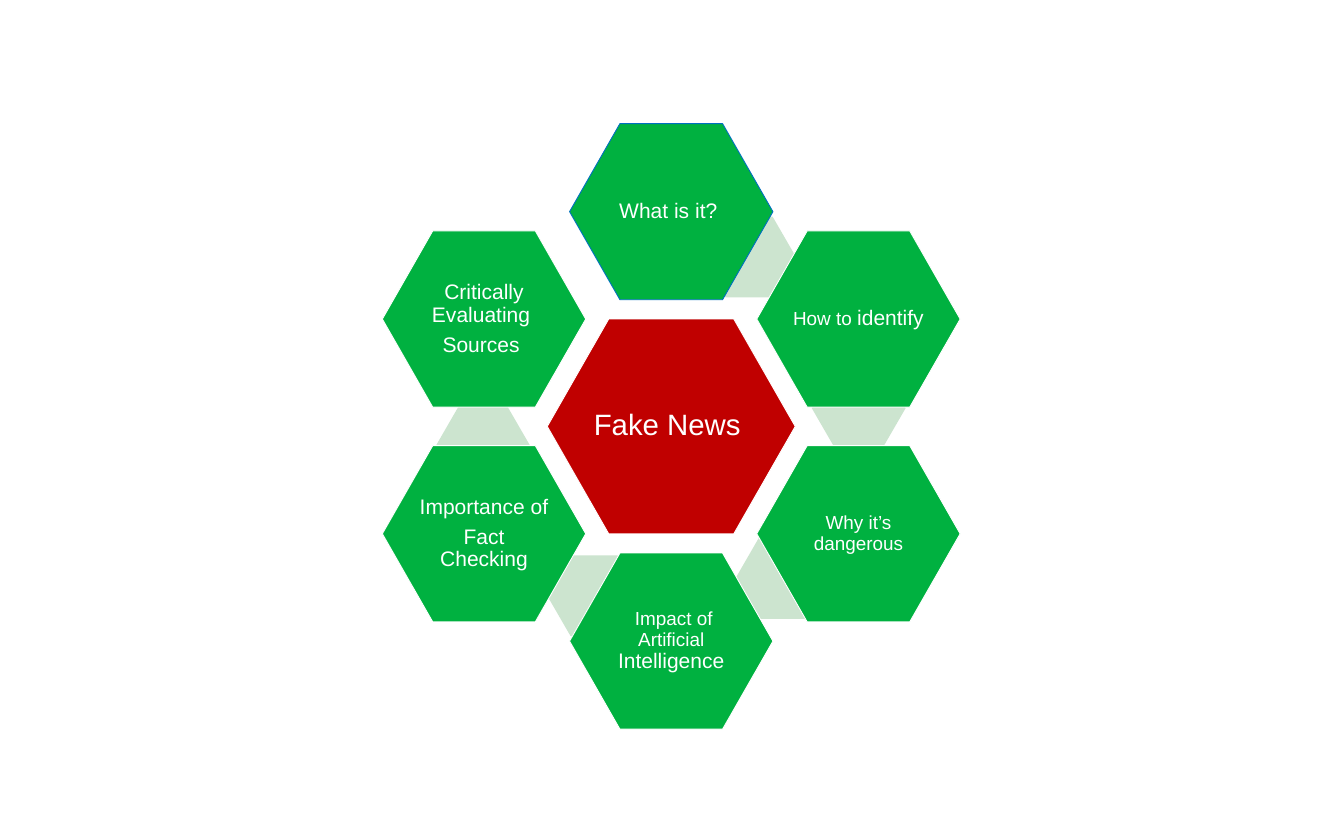
import math

import pptx
import pptx.dml.color
import pptx.enum.shapes
import pptx.enum.text
import pptx.util

Inches = pptx.util.Inches
Pt = pptx.util.Pt
RGBColor = pptx.dml.color.RGBColor

RED = RGBColor(0xC0, 0x00, 0x00)
GREEN = RGBColor(0x00, 0xB1, 0x40)
PALE_GREEN = RGBColor(0xCC, 0xE4, 0xCF)
BLUE = RGBColor(0x00, 0x70, 0xC0)
WHITE = RGBColor(0xFF, 0xFF, 0xFF)

# Ring geometry in inches
CENTER_X, CENTER_Y = 8.88, 5.64
RADIUS_X, RADIUS_Y = 2.86, 2.84
HUB_SIZE = (3.28, 2.84)
TOPIC_SIZE = (2.69, 2.33)
LINK_SIZE = (1.24, 1.07)

# Clockwise from the top: outline, paragraphs of (text, size) runs,
# and the centre of the pale link drawn behind the topic
TOPICS = [
    (BLUE, [[("What is it? ", 20)]], (9.91, 3.4)),
    (WHITE, [[("How to ", 18), ("identify", 20)]], (11.36, 5.4)),
    (WHITE, [[("Why it’s dangerous", 18)]], (10.35, 7.65)),
    (WHITE, [[(" Impact of Artificial ", 18), ("Intelligence", 20)]], (7.86, 7.88)),
    (WHITE, [[("Importance of ", 20)], [("Fact Checking", 20)]], (6.39, 5.89)),
    (WHITE, [[("Critically Evaluating ", 20)], [("Sources ", 20)]], None),
]


class HexagonSlide:
    font = "Arial"
    text_color = WHITE
    line_width = Pt(0.85)

    def __init__(self, slide):
        self.slide = slide

    def hexagon(self, center, size, fill, outline=None, adjustment=0.286):
        (x, y), (width, height) = center, size
        shape = self.slide.shapes.add_shape(
            pptx.enum.shapes.MSO_SHAPE.HEXAGON,
            Inches(x - width / 2), Inches(y - height / 2),
            Inches(width), Inches(height))
        shape.adjustments[0] = adjustment
        shape.shadow.inherit = False
        shape.fill.solid()
        shape.fill.fore_color.rgb = fill
        if outline is None:
            shape.line.fill.background()
        else:
            shape.line.color.rgb = outline
            shape.line.width = self.line_width
        return shape

    def label(self, shape, paragraphs, inset=0.03):
        frame = shape.text_frame
        frame.word_wrap = True
        frame.vertical_anchor = pptx.enum.text.MSO_ANCHOR.MIDDLE
        frame.margin_left = frame.margin_right = Inches(inset)
        frame.margin_top = frame.margin_bottom = Inches(inset)
        for index, runs in enumerate(paragraphs):
            paragraph = frame.add_paragraph() if index else frame.paragraphs[0]
            paragraph.alignment = pptx.enum.text.PP_ALIGN.CENTER
            paragraph.line_spacing = 0.9
            paragraph.space_after = Pt(7)
            for text, size in runs:
                run = paragraph.add_run()
                run.text = text
                run.font.name = self.font
                run.font.size = Pt(size)
                run.font.color.rgb = self.text_color


def main():
    deck = pptx.Presentation()
    deck.slide_width, deck.slide_height = Inches(17.78), Inches(11.11)
    page = HexagonSlide(deck.slides.add_slide(deck.slide_layouts[6]))

    # Central theme
    hub = page.hexagon((CENTER_X, CENTER_Y), HUB_SIZE, RED, WHITE)
    page.label(hub, [[("Fake News ", 28)]], inset=0.04)

    # Ring of topics, each with the link to its neighbour behind it
    for position, (outline, paragraphs, link_center) in enumerate(TOPICS):
        if link_center:
            page.hexagon(link_center, LINK_SIZE, PALE_GREEN, adjustment=0.289)
        angle = math.radians(60 * position)
        center = (CENTER_X + RADIUS_X * math.sin(angle),
                  CENTER_Y - RADIUS_Y * math.cos(angle))
        topic = page.hexagon(center, TOPIC_SIZE, GREEN, outline)
        page.label(topic, paragraphs)

    deck.save("out.pptx")


if __name__ == "__main__":
    main()
